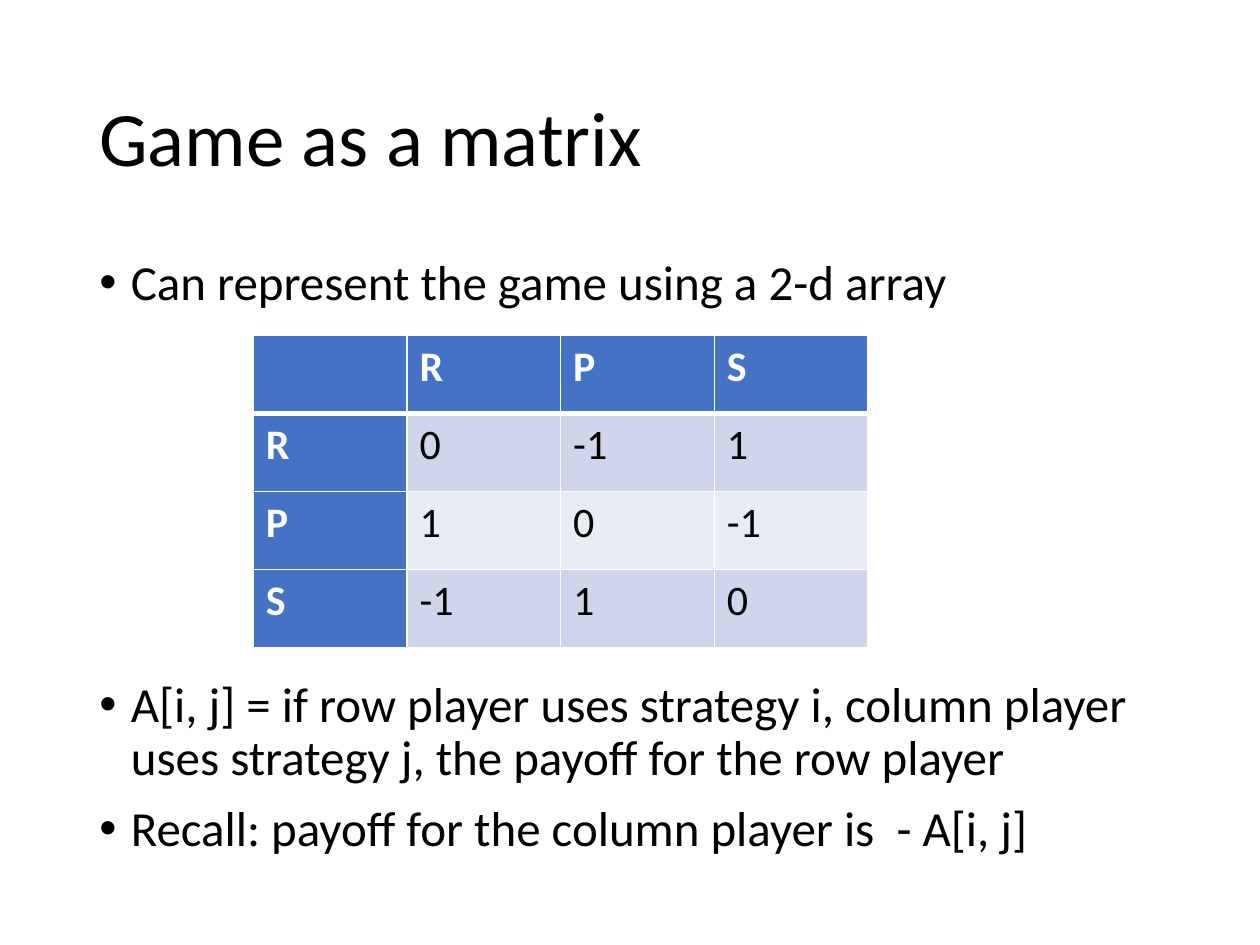
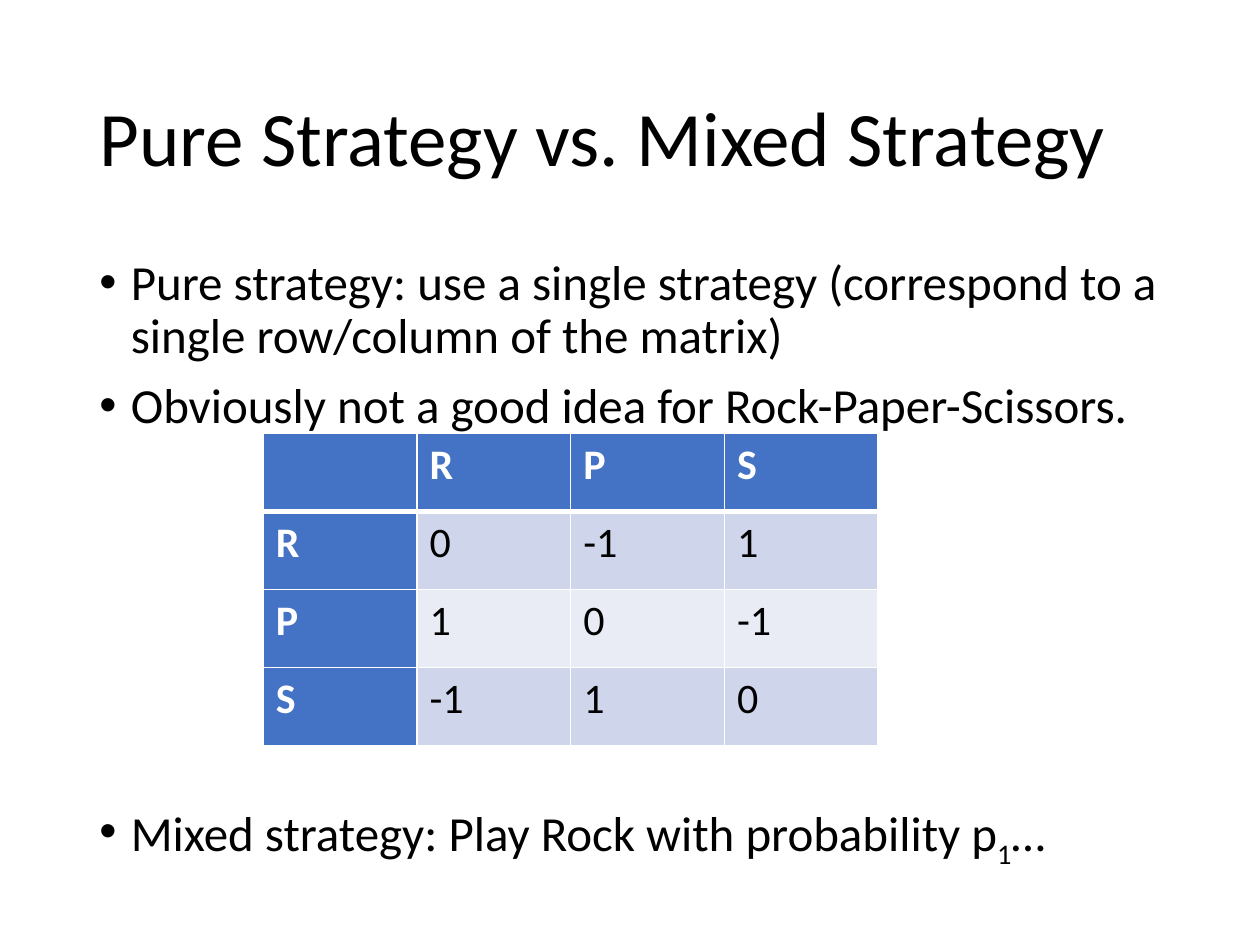
from pptx import Presentation
from pptx.dml.color import RGBColor
from pptx.enum import text as t
from pptx.oxml.ns import qn
from pptx.util import Inches, Pt
from lxml import etree

BLACK = RGBColor(0, 0, 0)
WHITE = RGBColor(255, 255, 255)
BLUE = RGBColor(0x44, 0x72, 0xC4)
BANDS = [RGBColor(0xCF, 0xD5, 0xEA), RGBColor(0xE9, 0xEB, 0xF5)]

GAME = [
    ["", "R", "P", "S"],
    ["R", "0", "-1", "1"],
    ["P", "1", "0", "-1"],
    ["S", "-1", "1", "0"],
]

SLIDES = [
    {
        "title": "Game as a matrix",
        "above": [["Can represent the game using a 2-d array"]],
        "below": [
            ["A[i, j] = if row player uses strategy i, column player "
             "uses strategy j, the payoff for the row player"],
            ["Recall: payoff for the column player is  - A[i, j]"],
        ],
        "body": 5.23,
        "grid": (2.01, 2.66),
    },
    {
        "title": "Pure Strategy vs. Mixed Strategy",
        "above": [
            ["Pure strategy: use a single strategy "
             "(correspond to a single row/column of the matrix)"],
            ["Obviously not a good idea for Rock-Paper-Scissors."],
        ],
        "below": [["Mixed strategy: Play Rock with probability p", ("1",), "…"]],
        "body": 5.3,
        "grid": (2.09, 3.44),
    },
]

LEFT, WIDTH = 0.69, 8.62
COL, ROW = 1.22, 0.62
TITLE = {"name": "Calibri", "size": Pt(44)}
BODY = {"name": "Calibri", "size": Pt(28)}
HEAD = {"name": "Calibri", "size": Pt(24), "bold": True}
CELL = {**HEAD, "bold": False}
SPACE, BREAK = Pt(10), Pt(211)


def style(font, look, color):
    for key, val in look.items():
        setattr(font, key, val)
    font.color.rgb = color


def add_box(slide, top, high, anchor):
    box = slide.shapes.add_textbox(
        Inches(LEFT), Inches(top), Inches(WIDTH), Inches(high))
    frame = box.text_frame
    frame.word_wrap = True
    frame.vertical_anchor = anchor
    return frame


def add_run(para, words, look):
    run = para.add_run()
    run.text = words
    style(run.font, look, BLACK)
    return run


def add_title(slide, words):
    para = add_box(slide, 0.4, 1.45, t.MSO_ANCHOR.MIDDLE).paragraphs[0]
    para.line_spacing = 0.9
    add_run(para, words, TITLE)


def add_bullet(para, parts, space):
    para.line_spacing = 0.9
    para.space_before = space
    props = para._p.get_or_add_pPr()
    props.set("marL", str(Inches(0.25)))
    props.set("indent", str(-Inches(0.25)))
    etree.SubElement(props, qn("a:buFont")).set("typeface", "Arial")
    etree.SubElement(props, qn("a:buChar")).set("char", "•")
    for part in parts:
        run = add_run(para, part[0] if isinstance(part, tuple) else part, BODY)
        if isinstance(part, tuple):
            run.font._element.set("baseline", "-25000")


def add_body(slide, page):
    frame = add_box(slide, 2, page["body"], t.MSO_ANCHOR.TOP)
    for i, parts in enumerate(page["above"] + page["below"]):
        para = frame.paragraphs[0] if i == 0 else frame.add_paragraph()
        add_bullet(para, parts, BREAK if i == len(page["above"]) else SPACE)


def add_edges(cell, row):
    props = cell._tc.get_or_add_tcPr()
    thick = {"lnB": row == 0, "lnT": row == 1}
    for i, side in enumerate(["lnL", "lnR", "lnT", "lnB"]):
        line = etree.Element(qn("a:" + side))
        line.set("w", str(Pt(3 if thick.get(side) else 1)))
        fill = etree.SubElement(line, qn("a:solidFill"))
        etree.SubElement(fill, qn("a:srgbClr")).set("val", str(WHITE))
        props.insert(i, line)


def add_grid(slide, left, top):
    rows, cols = len(GAME), len(GAME[0])
    grid = slide.shapes.add_table(
        rows, cols, Inches(left), Inches(top),
        Inches(COL * cols), Inches(ROW * rows)).table
    for r, line in enumerate(GAME):
        for c, words in enumerate(line):
            cell = grid.cell(r, c)
            head = r == 0 or c == 0
            cell.fill.solid()
            cell.fill.fore_color.rgb = BLUE if head else BANDS[(r - 1) % 2]
            add_edges(cell, r)
            if words:
                cell.text = words
                font = cell.text_frame.paragraphs[0].runs[0].font
                style(font, HEAD if head else CELL, WHITE if head else BLACK)


def main():
    deck = Presentation()
    deck.slide_width, deck.slide_height = Inches(10), Inches(7.5)
    for page in SLIDES:
        slide = deck.slides.add_slide(deck.slide_layouts[6])
        add_title(slide, page["title"])
        add_body(slide, page)
        add_grid(slide, *page["grid"])
    deck.save("out.pptx")


if __name__ == "__main__":
    main()
